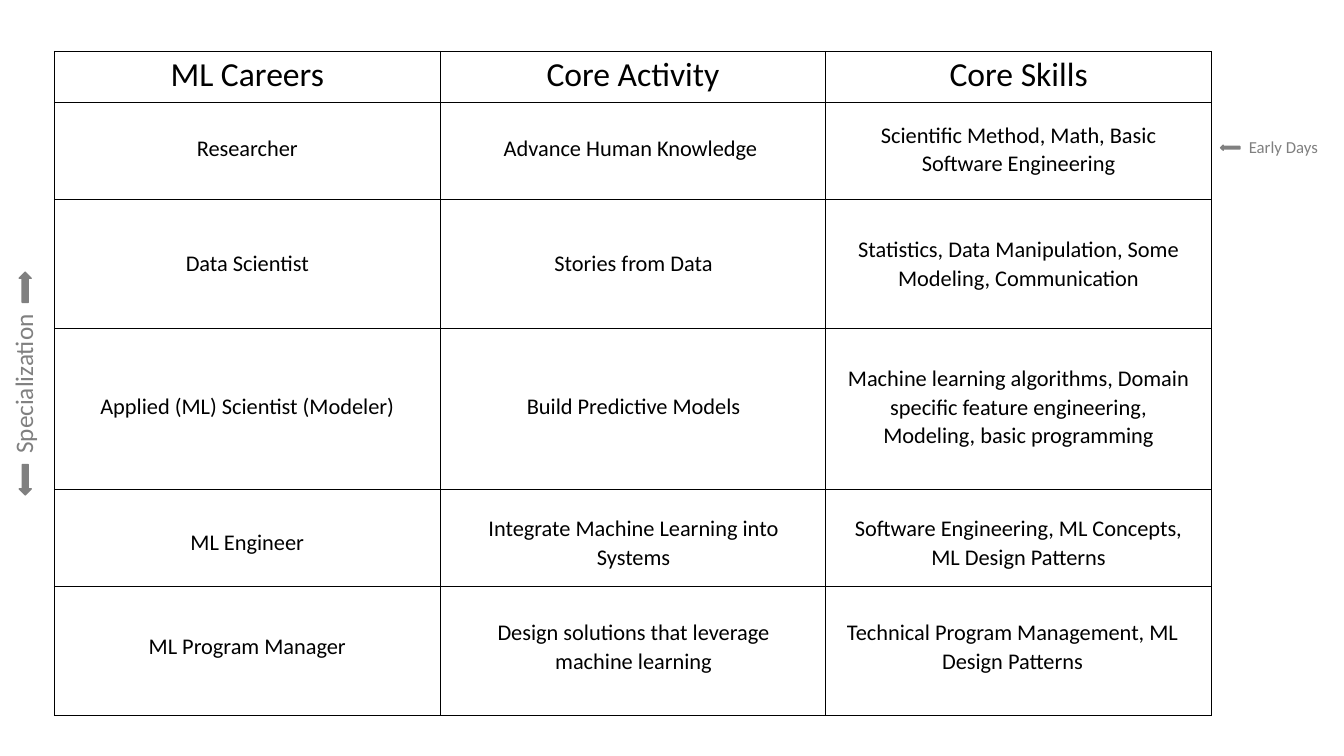
from dataclasses import dataclass

from lxml.etree import SubElement
from pptx import Presentation
from pptx.dml.color import RGBColor
from pptx.enum.shapes import MSO_SHAPE
from pptx.enum.text import MSO_ANCHOR, MSO_AUTO_SIZE, PP_ALIGN
from pptx.oxml.ns import qn
from pptx.slide import Slide
from pptx.table import _Cell
from pptx.text.text import _Paragraph
from pptx.util import Pt

COLORS = {"ink": "000000", "note": "808080"}
FONT = "Calibri"
LINE_SPACING = 1.07

# Table grid, in points
GRID_LEFT, GRID_TOP = 38.9, 36.7
COLUMN_WIDTH, HEADER_HEIGHT, ROW_UNIT = 275.5, 36.7, 23.04
HEADINGS = ("ML Careers", "Core Activity", "Core Skills")

# Text over the grid, in points
ENTRY_WIDTH = 258.5
ONE_LINE, EXTRA_LINE = 26.6, 20.9


@dataclass
class Entry:
    text: str
    lines: int = 1
    left: float = 323.3


@dataclass
class Career:
    name: str
    units: int  # row height in row units
    middle: float  # vertical centre of the row's text
    activity: Entry
    skills: Entry


@dataclass
class Label:
    text: str
    left: float
    top: float
    width: float
    height: float
    size: float
    rotation: float = 0


@dataclass
class Arrow:
    left: float
    top: float
    width: float
    height: float
    rotation: float


CAREERS = (
    Career("Researcher", 3, 105.5, Entry("Advance Human Knowledge", left=321.1),
           Entry("Scientific Method, Math, Basic Software Engineering", 2, 598.3)),
    Career("Data Scientist", 4, 187.5, Entry("Stories from Data"),
           Entry("Statistics, Data Manipulation, Some Modeling, Communication", 2, 598.3)),
    Career("Applied (ML) Scientist (Modeler)", 5, 289.5, Entry("Build Predictive Models"),
           Entry("Machine learning algorithms, Domain specific feature engineering, "
                 "Modeling, basic programming", 3, 598.3)),
    Career("ML Engineer", 3, 386.6, Entry("Integrate Machine Learning into Systems", 2),
           Entry("Software Engineering, ML Concepts, ML Design Patterns", 2, 598.3)),
    Career("ML Program Manager", 4, 460.8,
           Entry("Design solutions that leverage machine learning", 2),
           Entry("Technical Program Management, ML Design Patterns", 2, 594)),
)
LABELS = (
    Label("Early Days", 884.9, 94.3, 64.1, 21.6, 12),
    Label("Specialization", -41, 259.2, 115.2, 28.8, 18, 270),
)
ARROWS = (
    Arrow(871.9, 103.7, 13.7, 3.6, 180),
    Arrow(7.2, 200.9, 21.6, 8.6, 270),
    Arrow(7.2, 338.4, 21.6, 8.6, 90),
)


def write(paragraph: _Paragraph, text: str, size: float, color: str) -> None:
    run = paragraph.add_run()
    run.text = text
    for name, value in {"name": FONT, "size": Pt(size)}.items():
        setattr(run.font, name, value)
    run.font.color.rgb = RGBColor.from_string(COLORS[color])


def add_borders(cell: _Cell) -> None:
    properties = cell._tc.get_or_add_tcPr()
    for side in ("a:lnL", "a:lnR", "a:lnT", "a:lnB"):
        border = SubElement(properties, qn(side), w=str(Pt(1)))
        fill = SubElement(border, qn("a:solidFill"))
        SubElement(fill, qn("a:srgbClr"), val=COLORS["ink"])
    cell.fill.background()


def add_grid(slide: Slide) -> None:
    heights = [HEADER_HEIGHT] + [career.units * ROW_UNIT for career in CAREERS]
    grid = slide.shapes.add_table(
        len(heights), len(HEADINGS), Pt(GRID_LEFT), Pt(GRID_TOP),
        Pt(COLUMN_WIDTH * len(HEADINGS)), Pt(sum(heights))).table
    grid.first_row = grid.horz_banding = False
    for column in grid.columns:
        column.width = Pt(COLUMN_WIDTH)
    for row, height in zip(grid.rows, heights):
        row.height = Pt(height)
    for cell in grid.iter_cells():
        add_borders(cell)
    cell_format = {"margin_left": Pt(5), "margin_right": Pt(5),
                   "margin_top": 0, "margin_bottom": 0}
    for index, heading in enumerate(HEADINGS):
        cell = grid.cell(0, index)
        for name, value in cell_format.items():
            setattr(cell, name, value)
        title = cell.text_frame.paragraphs[0]
        title.alignment, title.line_spacing = PP_ALIGN.CENTER, LINE_SPACING
        write(title, heading, 24, "ink")


def add_entry(slide: Slide, entry: Entry, middle: float, width: float) -> None:
    height = ONE_LINE + EXTRA_LINE * (entry.lines - 1)
    frame = slide.shapes.add_textbox(
        Pt(entry.left), Pt(middle - height / 2), Pt(width), Pt(height)).text_frame
    frame_format = {"word_wrap": True, "vertical_anchor": MSO_ANCHOR.MIDDLE,
                    "auto_size": MSO_AUTO_SIZE.SHAPE_TO_FIT_TEXT}
    for name, value in frame_format.items():
        setattr(frame, name, value)
    paragraph = frame.paragraphs[0]
    paragraph.alignment = PP_ALIGN.CENTER
    if entry.lines > 1:
        paragraph.line_spacing = LINE_SPACING
    write(paragraph, entry.text, 16, "ink")


def add_label(slide: Slide, label: Label) -> None:
    box = slide.shapes.add_textbox(
        Pt(label.left), Pt(label.top), Pt(label.width), Pt(label.height))
    box.rotation = label.rotation
    box.text_frame.word_wrap = False
    box.text_frame.auto_size = MSO_AUTO_SIZE.SHAPE_TO_FIT_TEXT
    write(box.text_frame.paragraphs[0], label.text, label.size, "note")


def add_arrow(slide: Slide, arrow: Arrow) -> None:
    pointer = slide.shapes.add_shape(
        MSO_SHAPE.RIGHT_ARROW, Pt(arrow.left), Pt(arrow.top),
        Pt(arrow.width), Pt(arrow.height))
    pointer.rotation = arrow.rotation
    pointer.shadow.inherit = False
    pointer.fill.solid()
    pointer.fill.fore_color.rgb = RGBColor.from_string(COLORS["note"])
    pointer.line.color.rgb = RGBColor.from_string(COLORS["note"])
    pointer.line.width = Pt(1)


def main() -> None:
    deck = Presentation()
    deck.slide_width, deck.slide_height = Pt(960), Pt(540)
    slide = deck.slides.add_slide(deck.slide_layouts[6])

    # Grid with headings, then the text of each row
    add_grid(slide)
    for career in CAREERS:
        add_entry(slide, career.activity, career.middle, ENTRY_WIDTH)
        add_entry(slide, career.skills, career.middle, ENTRY_WIDTH)
        add_entry(slide, Entry(career.name, left=GRID_LEFT), career.middle, COLUMN_WIDTH)

    # Notes in the margins
    for label in LABELS:
        add_label(slide, label)
    for arrow in ARROWS:
        add_arrow(slide, arrow)

    deck.save("out.pptx")


if __name__ == "__main__":
    main()
